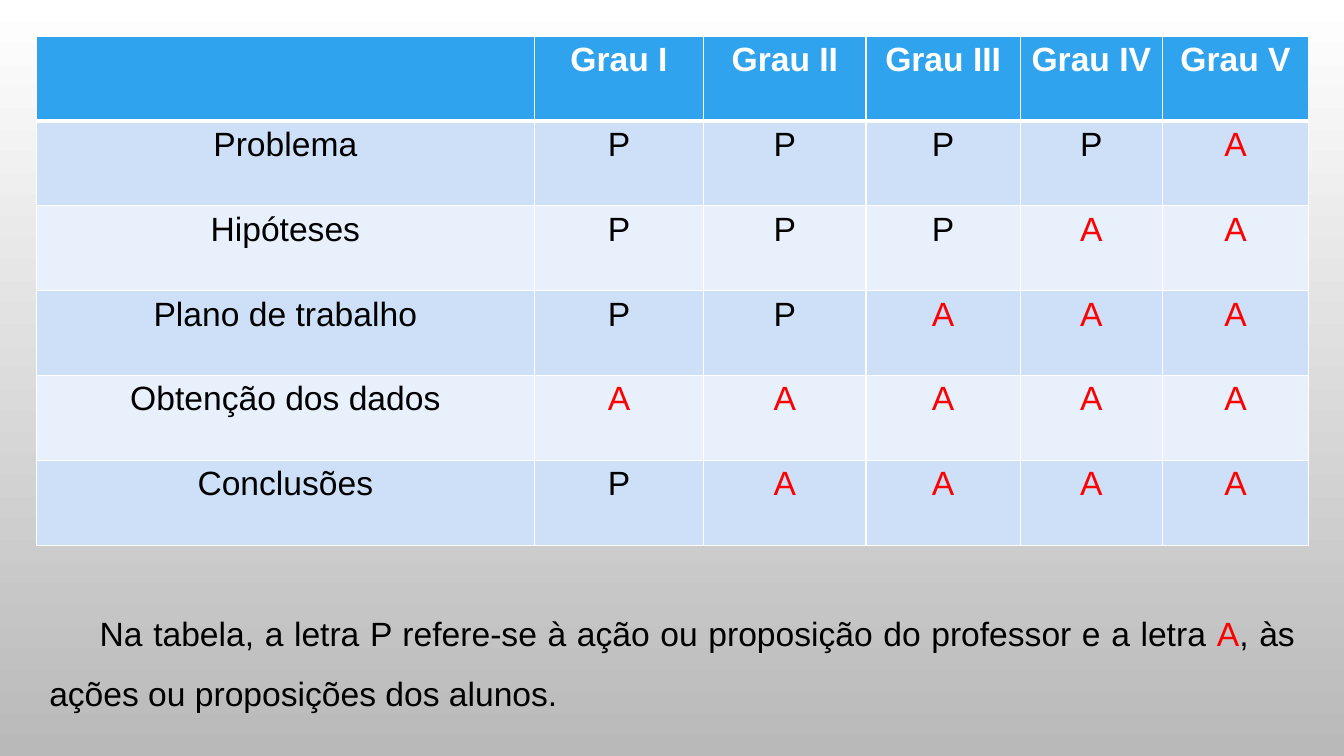
from dataclasses import dataclass

from lxml import etree
from pptx import Presentation
from pptx import util as u
from pptx.dml.color import RGBColor
from pptx.enum import text
from pptx.oxml import ns


@dataclass(frozen=True)
class Theme:
    """Colours and type of the slide."""
    font: str = "Arial"
    size: int = 24
    ink: str = "000000"
    student: str = "FF0000"
    white: str = "FFFFFF"
    header: str = "2FA3EE"
    bands: tuple = ("CDE0F8", "E8F0FC")
    backdrop: tuple = ("FFFFFF", "B9B9B9")


THEME = Theme()
GRADES = ["", "Grau I", "Grau II", "Grau III", "Grau IV", "Grau V"]
STAGES = {
    "Problema": "PPPPA",
    "Hipóteses": "PPPAA",
    "Plano de trabalho": "PPAAA",
    "Obtenção dos dados": "AAAAA",
    "Conclusões": "PAAAA",
}
GRADE_SHARES = [4.94, 1.68, 1.61, 1.53, 1.41, 1.45]
EXPLANATION = [
    "Na tabela, a letra P refere-se à ação ou proposição do professor e a letra ",
    "A",
    ", às ações ou proposições dos alunos.",
]


def style_run(run, color, bold=False):
    """Give a run the theme font in the given colour."""
    run.font.name = THEME.font
    run.font.size = u.Pt(THEME.size)
    run.font.bold = bold
    run.font.color.rgb = RGBColor.from_string(color)


def ink_for(wording):
    """Return the student colour for the letter A, otherwise the text colour."""
    return THEME.student if wording == "A" else THEME.ink


def add_borders(cell, bottom, top):
    """Draw white lines round a cell, with given top and bottom widths."""
    properties = cell._tc.get_or_add_tcPr()
    for side, width in zip("LRTB", (1, 1, top, bottom)):
        line = etree.SubElement(properties, ns.qn(f"a:ln{side}"), w=str(u.Pt(width)))
        paint = etree.SubElement(line, ns.qn("a:solidFill"))
        etree.SubElement(paint, ns.qn("a:srgbClr"), val=THEME.white)


def fill_cell(cell, wording, row):
    """Write and format one cell according to its row."""
    heading = row == 0
    add_borders(cell, bottom=3 if heading else 1, top=3 if row == 1 else 1)
    cell.fill.solid()
    band = THEME.header if heading else THEME.bands[(row - 1) % 2]
    cell.fill.fore_color.rgb = RGBColor.from_string(band)
    cell.margin_left = cell.margin_right = u.Inches(0.07)
    paragraph = cell.text_frame.paragraphs[0]
    paragraph.text = wording
    paragraph.alignment = text.PP_ALIGN.CENTER
    paragraph.font.size = u.Pt(THEME.size)
    for run in paragraph.runs:
        style_run(run, THEME.white if heading else ink_for(wording), heading)


def add_grades(slide, left, top, width, height):
    """Place the table of inquiry grades in its box."""
    rows = [GRADES] + [[stage, *letters] for stage, letters in STAGES.items()]
    grades = slide.shapes.add_table(
        len(rows), len(GRADES), *map(u.Inches, (left, top, width, height))).table
    for column, share in zip(grades.columns, GRADE_SHARES):
        column.width = u.Inches(width * share / sum(GRADE_SHARES))
    for row, wordings in enumerate(rows):
        for column, wording in enumerate(wordings):
            fill_cell(grades.cell(row, column), wording, row)


def add_explanation(slide, left, top, width, height):
    """Place the key to the letters in its box."""
    box = slide.shapes.add_textbox(*map(u.Inches, (left, top, width, height)))
    box.text_frame.word_wrap = True
    paragraph = box.text_frame.paragraphs[0]
    paragraph.alignment = text.PP_ALIGN.JUSTIFY
    paragraph.line_spacing = 1.5
    paragraph._p.get_or_add_pPr().set("indent", str(u.Inches(0.5)))
    for wording in EXPLANATION:
        run = paragraph.add_run()
        run.text = wording
        style_run(run, ink_for(wording))


def paint_background(slide):
    """Shade the slide from top to bottom."""
    fill = slide.background.fill
    fill.gradient()
    fill.gradient_angle = 270
    for stop, color in zip(fill.gradient_stops, THEME.backdrop):
        stop.color.rgb = RGBColor.from_string(color)


def main():
    """Build and save the slide."""
    deck = Presentation()
    deck.slide_width, deck.slide_height = u.Inches(13.33), u.Inches(7.5)
    slide = deck.slides.add_slide(deck.slide_layouts[6])
    paint_background(slide)
    add_grades(slide, 0.36, 0.36, 12.62, 5.05)
    add_explanation(slide, 0.39, 5.83, 12.55, 1.24)
    deck.save("out.pptx")


if __name__ == "__main__":
    main()
